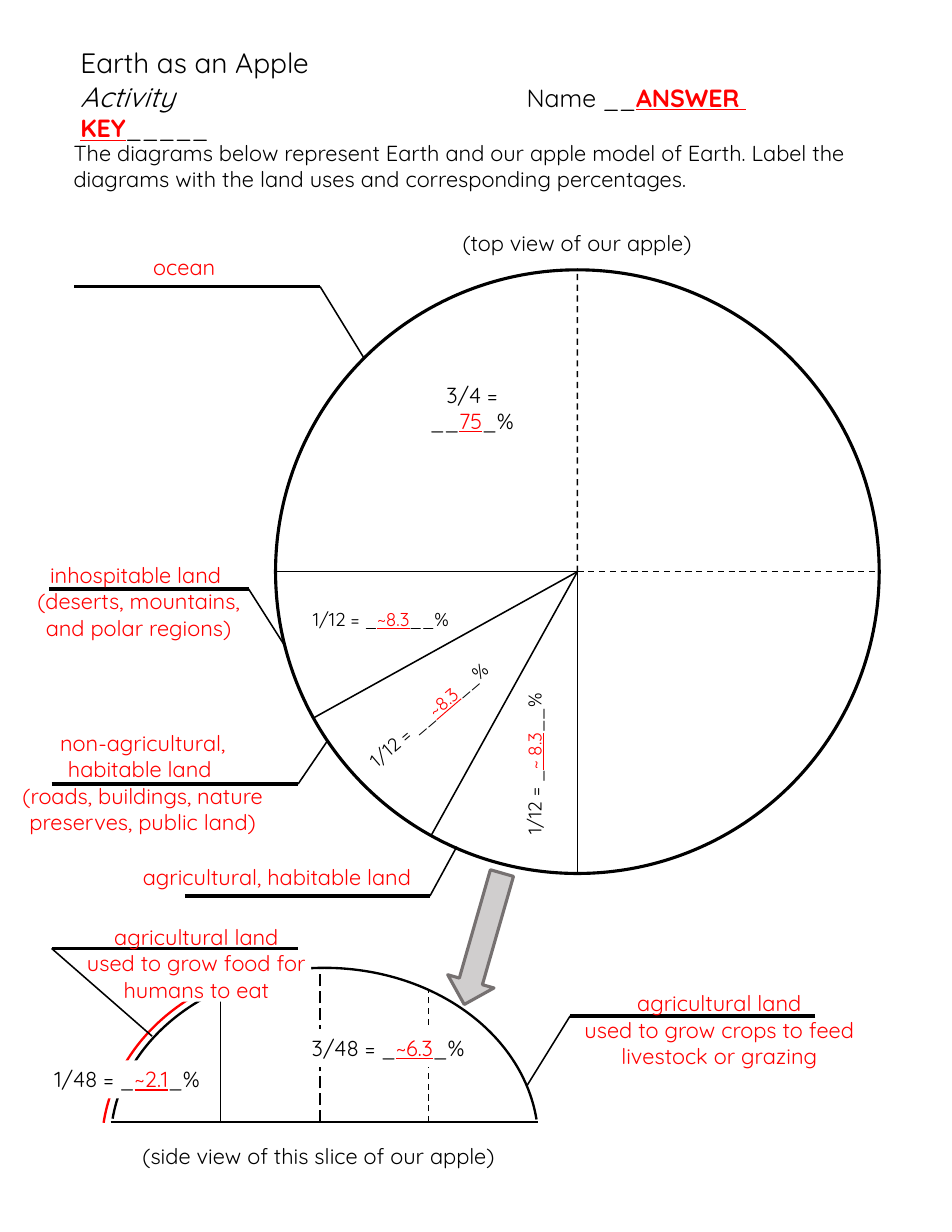
from dataclasses import dataclass
from math import cos, radians, sin

from lxml.etree import SubElement
from pptx import Presentation
from pptx.dml.color import RGBColor
from pptx.enum.dml import MSO_LINE_DASH_STYLE as Dash
from pptx.enum.shapes import MSO_CONNECTOR, MSO_SHAPE as Preset
from pptx.enum.text import MSO_ANCHOR, MSO_AUTO_SIZE as AutoSize, PP_ALIGN as Align
from pptx.oxml.ns import qn
from pptx.util import Cm, Pt


@dataclass(frozen=True)
class Theme:
    font: str = "Quicksand"
    ink: RGBColor = RGBColor(0, 0, 0)
    answer: RGBColor = RGBColor(0xFF, 0, 0)
    paper: RGBColor = RGBColor(0xFF, 0xFF, 0xFF)
    arrow_fill: RGBColor = RGBColor(0xD0, 0xCE, 0xCE)
    arrow_edge: RGBColor = RGBColor(0x76, 0x71, 0x71)
    title: int = 18
    name: int = 16
    body: int = 14
    small: int = 12
    thin: float = 1
    medium: float = 1.5
    outline: float = 2
    rule: float = 2.25


THEME = Theme()


def cm(*lengths):
    return [Cm(length) for length in lengths]


def add_run(paragraph, text, size, color=THEME.ink, bold=False, italic=False, underline=False):
    run = paragraph.add_run()
    run.text = text
    font = run.font
    font.name, font.size, font.color.rgb = THEME.font, Pt(size), color
    font.bold, font.italic, font.underline = bold, italic, underline


def add_text(slide, box, paragraphs, size=THEME.body, align=Align.CENTER, rotation=0, filled=False):
    """Each paragraph is a list of (text, color, underline) runs."""
    area = slide.shapes.add_textbox(*cm(*box))
    area.rotation = rotation
    if filled:
        area.fill.solid()
        area.fill.fore_color.rgb = THEME.paper
    frame = area.text_frame
    frame.word_wrap = True
    frame.auto_size = AutoSize.SHAPE_TO_FIT_TEXT
    for index, runs in enumerate(paragraphs):
        paragraph = frame.add_paragraph() if index else frame.paragraphs[0]
        paragraph.alignment = align
        for text, color, underline in runs:
            add_run(paragraph, text, size, color, underline=underline)


def add_note(slide, box, text, align=Align.CENTER):
    add_text(slide, box, [[(text, THEME.ink, False)]], align=align)


def add_blank(slide, box, before, answer, after, **style):
    """A fraction whose percentage is filled in."""
    runs = [(before, THEME.ink, False), (answer, THEME.answer, True), (after, THEME.ink, False)]
    add_text(slide, box, [runs], **style)


def add_line(slide, start, end, width=THEME.thin, dash=None):
    line = slide.shapes.add_connector(MSO_CONNECTOR.STRAIGHT, *cm(*start, *end))
    line.line.color.rgb, line.line.width = THEME.ink, Pt(width)
    if dash:
        line.line.dash_style = dash
    SubElement(line._element.spPr, qn("a:effectLst"))


def add_figure(slide, preset, box, edge=None, width=THEME.thin, fill=None):
    figure = slide.shapes.add_shape(preset, *cm(*box))
    figure.shadow.inherit = False
    if fill is None:
        figure.fill.background()
    else:
        figure.fill.solid()
        figure.fill.fore_color.rgb = fill
    if edge is None:
        figure.line.fill.background()
    else:
        figure.line.color.rgb, figure.line.width = edge, Pt(width)
    return figure


def add_arc(slide, box, start, end, color):
    """Angles are in degrees, clockwise from the right."""
    arc = add_figure(slide, Preset.ARC, box, color, THEME.medium)
    for index, angle in enumerate((start, end)):
        arc.adjustments[index] = angle * 0.6  # 60000 units a degree, scaled by 100000


def header(slide, left, top):
    title = slide.shapes.title
    title.left, title.top, title.width, title.height = cm(left + 0.15, top, 18.59, 1.8)
    frame = title.text_frame
    frame.word_wrap, frame.auto_size = True, AutoSize.NONE
    frame.vertical_anchor = MSO_ANCHOR.TOP
    heading, activity = frame.paragraphs[0], frame.add_paragraph()
    for paragraph in (heading, activity):
        paragraph.alignment = Align.LEFT
        paragraph.line_spacing = 1.0
        paragraph.space_before = Pt(0)
    tabs = SubElement(activity._p.get_or_add_pPr(), qn("a:tabLst"))
    SubElement(tabs, qn("a:tab"), pos=str(Cm(10.12)), algn="l")

    add_run(heading, "Earth as an Apple", THEME.title)
    add_run(activity, "Activity\t", THEME.title, italic=True)
    add_run(activity, "Name __", THEME.name)
    add_run(activity, "ANSWER ", THEME.name, THEME.answer, bold=True, underline=True)
    activity.add_line_break()
    add_run(activity, "KEY", THEME.name, THEME.answer, bold=True, underline=True)
    add_run(activity, "_____", THEME.name)
    add_note(slide, (left, top + 2.14, 19.18, 1.45),
             "The diagrams below represent Earth and our apple model of Earth. "
             "Label the diagrams with the land uses and corresponding percentages.", Align.LEFT)


def top_view(slide, left, top, size):
    radius = size / 2
    center = (left + radius, top + radius)
    add_note(slide, (left + 2.84, top - 1.04, 8, 0.86), "(top view of our apple)")
    add_figure(slide, Preset.OVAL, (left, top, size, size), THEME.ink, THEME.outline)
    cuts = [(90, None), (119, None), (151, None), (180, None), (270, Dash.DASH), (0, Dash.DASH)]
    for angle, dash in cuts:
        rim = (center[0] + radius * cos(radians(angle)), center[1] + radius * sin(radians(angle)))
        add_line(slide, center, rim, dash=dash)

    add_blank(slide, (left + 2.64, top + 2.41, 3.63, 0.86), "3/4 = __", "75", "_%")
    twelfths = [
        (0.51, 7.55, 3.76, "1/12 = _", "~8.3", 0),
        (1.52, 9.7, 3.91, "1/12 = __", "~8.3", 319.4),
        (3.91, 10.82, 3.91, "1/12 = _", "~ 8.3", 270),
    ]
    for x, y, width, before, answer, rotation in twelfths:
        add_blank(slide, (left + x, top + y, width, 0.76), before, answer, "__%",
                  size=THEME.small, rotation=rotation)

    arrow = add_figure(slide, Preset.UP_ARROW, (left + 4.16, top + 13.62, 1.09, 3.1),
                       THEME.arrow_edge, THEME.outline, THEME.arrow_fill)
    arrow.rotation = 196


def side_view(slide, left, top, width):
    base = top + 3.5
    add_line(slide, (left, base), (left + width, base), THEME.medium)
    add_arc(slide, (left, top, width, 7.92), 186.41, 353.82, THEME.ink)
    for x, y, dash in [(4.75, 0, Dash.LONG_DASH), (2.49, 0.51, None), (7.21, 0.51, Dash.DASH)]:
        add_line(slide, (left + x, base), (left + x, top + y), dash=dash)
    add_arc(slide, (left - 0.2, top - 0.1, width, 8.31), 186.41, 239.83, THEME.answer)
    for x, y, before, answer in [(4.3, 1.39, "3/48 = _", "~6.3"), (-1.62, 2.1, "1/48 = _", "~2.1")]:
        add_blank(slide, (left + x, top + y, 3.99, 0.86), before, answer, "_%", filled=True)
    add_figure(slide, Preset.RECTANGLE, (left + 0.13, top - 0.25, 4.42, 1.02), fill=THEME.paper)
    add_note(slide, (left - 0.27, top + 3.83, 9.98, 0.86), "(side view of this slice of our apple)")


def land_label(slide, box, rule, tip, texts):
    """Rule is (start x, elbow x, y); rule and tip are relative to the box."""
    left, top = box[:2]
    start, bend, y = rule
    elbow = (left + bend, top + y)
    add_line(slide, (left + start, top + y), elbow, THEME.rule)
    add_line(slide, elbow, (left + tip[0], top + tip[1]))
    add_text(slide, box, [[(text, THEME.answer, False)] for text in texts])


LAND_LABELS = [
    ((0.18, 5.64, 8, 0.86), (1.5, 7.08, 0.86), (8.08, 2.49), ["ocean"]),
    ((0.15, 12.62, 5.99, 2.06), (0.97, 5.49, 0.74), (6.33, 2.06),
     ["inhospitable land ", "(deserts, mountains, and polar regions)"]),
    ((0.05, 16.43, 6.38, 2.64), (1.12, 6.71, 1.35), (7.37, 0.38),
     ["non-agricultural, habitable land ", "(roads, buildings, nature preserves, public land)"]),
    ((2.64, 19.46, 7.29, 0.86), (1.55, 7.11, 0.86), (7.72, -0.26),
     ["agricultural, habitable land"]),
    ((0.81, 20.83, 7.29, 2.06), (5.95, 0.36, 0.68), (2.64, 2.67),
     ["agricultural land", "used to grow food for humans to eat"]),
    ((12.67, 22.33, 7.29, 2.06), (5.82, 0.26, 0.71), (-0.73, 2.31),
     ["agricultural land", "used to grow crops to feed livestock or grazing"]),
]


def main():
    deck = Presentation()
    deck.slide_width, deck.slide_height = cm(21.59, 27.94)
    slide = deck.slides.add_slide(deck.slide_layouts[5])
    header(slide, 1.42, 0.91)
    top_view(slide, 6.25, 6.12, 13.69)
    side_view(slide, 2.51, 21.95, 9.7)
    for label in LAND_LABELS:
        land_label(slide, *label)
    deck.save("out.pptx")


if __name__ == "__main__":
    main()
